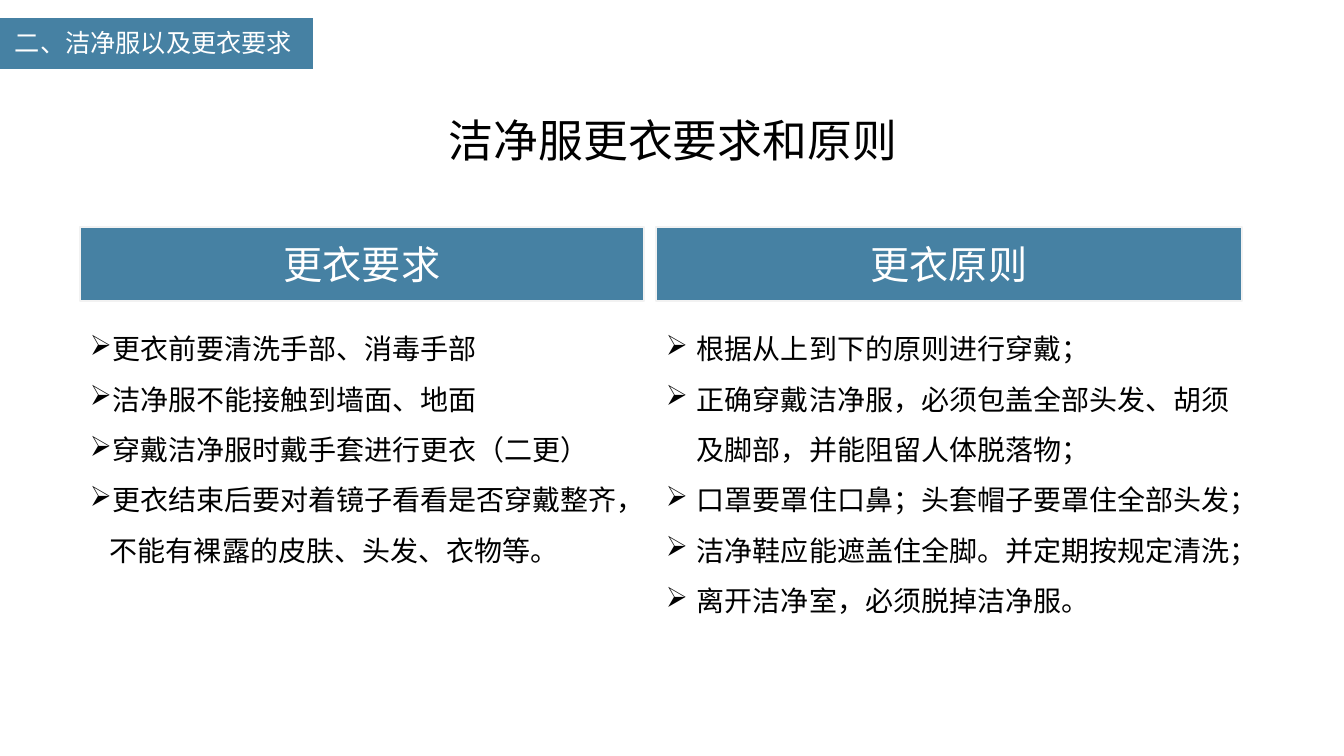
from lxml import etree
from pptx import Presentation
from pptx import util as u
from pptx.dml.color import RGBColor
from pptx.enum import shapes, text
from pptx.oxml import ns

EMU_PER_PX = 914400 / 100.8
FONT = "Noto Sans CJK SC"
BLUE, WHITE, BLACK, PALE = "4681A3", "FFFFFF", "000000", "F2F2F2"

REQUIREMENTS = [
    "更衣前要清洗手部、消毒手部",
    "洁净服不能接触到墙面、地面",
    "穿戴洁净服时戴手套进行更衣（二更）",
    "更衣结束后要对着镜子看看是否穿戴整齐，不能有裸露的皮肤、头发、衣物等。",
]
PRINCIPLES = [
    "根据从上到下的原则进行穿戴；",
    "正确穿戴洁净服，必须包盖全部头发、胡须及脚部，并能阻留人体脱落物；",
    "口罩要罩住口鼻；头套帽子要罩住全部头发；",
    "洁净鞋应能遮盖住全脚。并定期按规定清洗；",
    "离开洁净室，必须脱掉洁净服。",
]


def px(length):
    return u.Emu(round(length * EMU_PER_PX))


def color(value):
    return RGBColor.from_string(value)


def add_bar(slide, left, top, width, height, line=None):
    shape = slide.shapes.add_shape(
        shapes.MSO_SHAPE.RECTANGLE, px(left), px(top), px(width), px(height))
    shape.shadow.inherit = False
    shape.fill.solid()
    shape.fill.fore_color.rgb = color(BLUE)
    if line:
        shape.line.color.rgb = color(line)
        shape.line.width = u.Pt(1)
    else:
        shape.line.fill.background()
    return shape


def add_text(slide, left, top, width, height, wrap=True):
    shape = slide.shapes.add_textbox(px(left), px(top), px(width), px(height))
    shape.text_frame.word_wrap = wrap
    shape.text_frame.auto_size = text.MSO_AUTO_SIZE.SHAPE_TO_FIT_TEXT
    return shape


def write(paragraph, words, size, ink, align=text.PP_ALIGN.LEFT):
    paragraph.text = words
    paragraph.alignment = align
    paragraph.font.size = u.Pt(size)
    paragraph.font.color.rgb = color(ink)
    paragraph.font.name = FONT
    defaults = paragraph._p.pPr.find(ns.qn("a:defRPr"))
    etree.SubElement(defaults, ns.qn("a:ea"), typeface=FONT)


def add_bullet(paragraph, indent):
    properties = paragraph._p.pPr
    properties.set("marL", str(px(indent)))
    properties.set("indent", str(-px(indent)))
    bullet = etree.Element(ns.qn("a:buChar"), char="➢")
    properties.find(ns.qn("a:defRPr")).addprevious(bullet)


def add_section_tag(slide, left, top, width, height):
    add_bar(slide, left, top, width, height)
    label = add_text(slide, left + 5, top + 4, width - 12, height - 11, wrap=False)
    write(label.text_frame.paragraphs[0], "二、洁净服以及更衣要求", 18, WHITE)


def add_title(slide, left, top, width, height):
    title = add_text(slide, left, top, width, height)
    write(title.text_frame.paragraphs[0], "洁净服更衣要求和原则", 32, BLACK)


def add_column(slide, left, top, width, height, heading, items, indent):
    bar = add_bar(slide, left, top, width, 74, PALE)
    bar.text_frame.vertical_anchor = text.MSO_ANCHOR.MIDDLE
    write(bar.text_frame.paragraphs[0], heading, 28, WHITE, text.PP_ALIGN.CENTER)

    body = add_text(slide, left, top + 83, width, height - 83)
    frame = body.text_frame
    for number, item in enumerate(items):
        paragraph = frame.add_paragraph() if number else frame.paragraphs[0]
        write(paragraph, item, 20, BLACK)
        paragraph.line_spacing = 1.5
        add_bullet(paragraph, indent)


def main():
    presentation = Presentation()
    presentation.slide_width, presentation.slide_height = px(1344), px(756)
    slide = presentation.slides.add_slide(presentation.slide_layouts[6])
    add_section_tag(slide, 0, 18, 313, 51)
    add_title(slide, 439, 108, 529, 65)
    add_column(slide, 80, 227, 564, 348, "更衣要求", REQUIREMENTS, 20)
    add_column(slide, 656, 227, 586, 398, "更衣原则", PRINCIPLES, 31)
    presentation.save("out.pptx")


if __name__ == "__main__":
    main()
